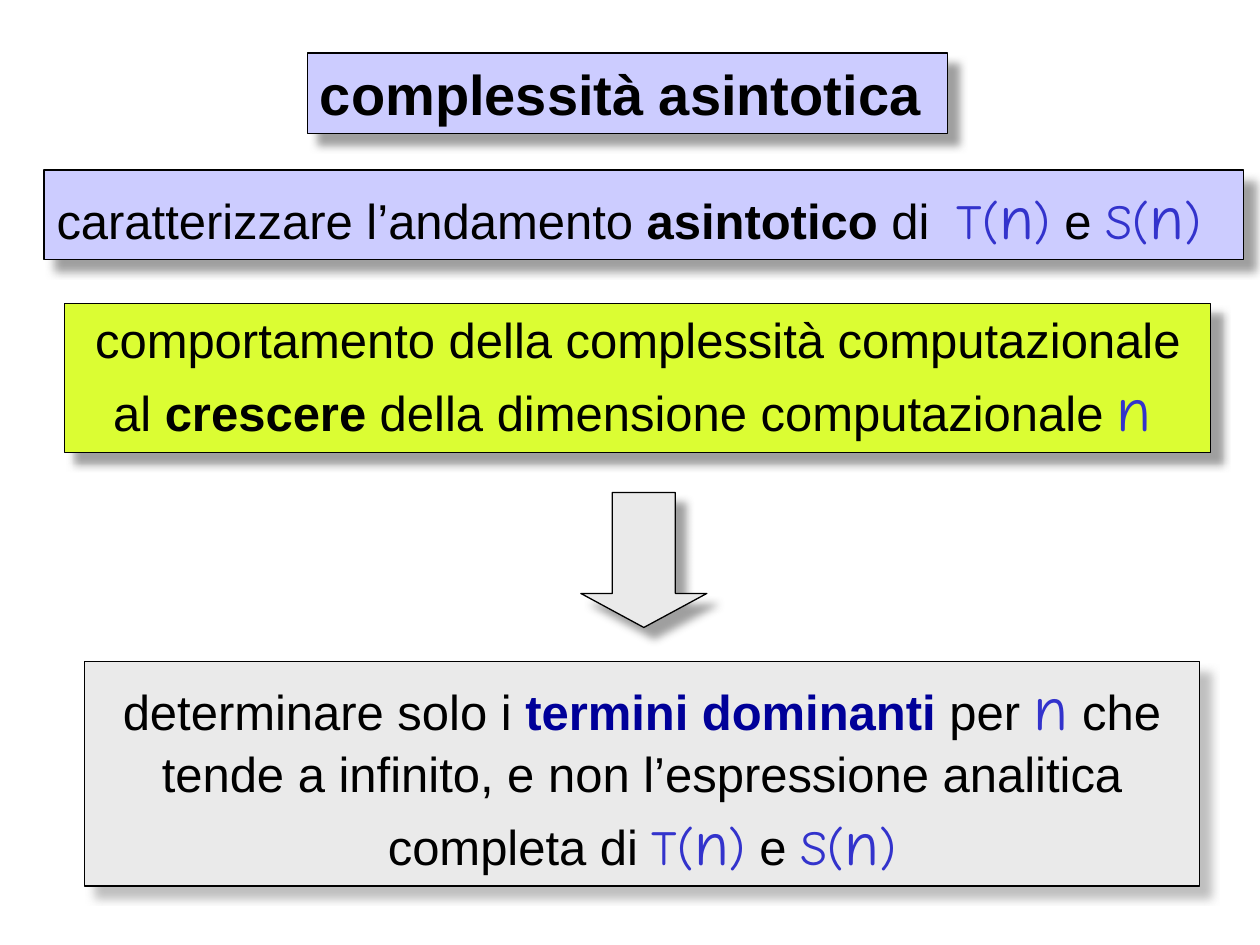
"""Build the slide on asymptotic complexity."""
from dataclasses import dataclass

from lxml.etree import SubElement
from pptx import Presentation
from pptx.dml.color import RGBColor
from pptx.enum.shapes import MSO_SHAPE as Shape
from pptx.enum.text import MSO_ANCHOR as Anchor, MSO_AUTO_SIZE as AutoSize, PP_ALIGN as Align
from pptx.oxml.ns import qn
from pptx.util import Cm, Pt

BLACK = RGBColor(0x00, 0x00, 0x00)
FORMULA_BLUE = RGBColor(0x33, 0x33, 0xCC)
NAVY = RGBColor(0x00, 0x00, 0x99)
LILAC = RGBColor(0xCC, 0xCC, 0xFF)
LIME = RGBColor(0xDB, 0xFD, 0x33)
PALE_GREY = RGBColor(0xEA, 0xEA, 0xEA)


@dataclass(frozen=True)
class Span:
    text: str
    size: int = 28
    bold: bool = False
    color: RGBColor = BLACK
    name: str = "Arial"


@dataclass(frozen=True)
class Panel:
    left: float
    top: float
    width: float
    height: float
    fill: RGBColor
    spans: tuple[Span, ...] = ()
    align: Align = Align.LEFT
    wrap: bool = True
    kind: Shape = Shape.RECTANGLE
    shadow_opacity: int = 75


def formula(text: str, size: int = 28) -> Span:
    return Span(text, size, color=FORMULA_BLUE, name="Comic Neue")


def function_of_n(letter: str) -> tuple[Span, ...]:
    return formula(f"{letter}("), SIZE_N, formula(")")


def add_shadow(box, opacity: int) -> None:
    box.shadow.inherit = False
    effects = box._element.spPr.find(qn("a:effectLst"))
    shadow = SubElement(effects, qn("a:outerShdw"), blurRad=str(Pt(5)),
                        dist=str(Pt(8.5)), dir="2700000", algn="ctr", rotWithShape="0")
    color = SubElement(shadow, qn("a:srgbClr"), val="808080")
    SubElement(color, qn("a:alpha"), val=str(opacity * 1000))


def add_span(para, span: Span) -> None:
    run = para.add_run()
    run.text = span.text
    formats = {"size": Pt(span.size), "bold": span.bold, "name": span.name}
    for key, value in formats.items():
        setattr(run.font, key, value)
    run.font.color.rgb = span.color


def add_panel(page, panel: Panel):
    place = (Cm(length) for length in (panel.left, panel.top, panel.width, panel.height))
    box = page.shapes.add_shape(panel.kind, *place)
    box.fill.solid()
    box.fill.fore_color.rgb = panel.fill
    box.line.color.rgb = BLACK
    box.line.width = Pt(0.75)
    add_shadow(box, panel.shadow_opacity)
    if panel.spans:
        formats = {"word_wrap": panel.wrap, "vertical_anchor": Anchor.TOP,
                   "auto_size": AutoSize.SHAPE_TO_FIT_TEXT}
        for key, value in formats.items():
            setattr(box.text_frame, key, value)
        para = box.text_frame.paragraphs[0]
        para.alignment = panel.align
        for span in panel.spans:
            add_span(para, span)
    return box


SIZE_N = formula("n", 36)
T_AND_S = (*function_of_n("T"), Span(" e "), *function_of_n("S"))

PANELS = (
    Panel(6.2, 1.07, 12.9, 1.63, LILAC, (Span("complessità asintotica", 32, True),)),
    Panel(1.3, 6.12, 23.11, 3, LIME, (
        Span("comportamento della complessità computazionale al "),
        Span("crescere", bold=True),
        Span(" della dimensione computazionale "),
        SIZE_N,
        Span(" ", 24, name="Times New Roman"),
    ), Align.CENTER),
    Panel(0.89, 3.43, 24.18, 1.8, LILAC, (
        Span("caratterizzare l’andamento "),
        Span("asintotico", bold=True),
        Span(" di  "),
        *T_AND_S,
    ), wrap=False),
    Panel(1.7, 13.34, 22.48, 4.52, PALE_GREY, (
        Span("determinare solo i "),
        Span("termini dominanti", bold=True, color=NAVY),
        Span(" per "),
        SIZE_N,
        Span(" che tende a infinito, e non l’espressione analitica completa di "),
        *T_AND_S,
    ), Align.CENTER, shadow_opacity=50),
)
ARROW = Panel(11.71, 9.93, 2.54, 2.72, PALE_GREY, kind=Shape.DOWN_ARROW)


def main() -> None:
    deck = Presentation()
    deck.slide_width, deck.slide_height = Cm(25.4), Cm(19.05)
    page = deck.slides.add_slide(deck.slide_layouts[6])
    for panel in PANELS:
        add_panel(page, panel)
    arrow = add_panel(page, ARROW)
    arrow.adjustments[0], arrow.adjustments[1] = 0.5, 0.27
    deck.save("out.pptx")


if __name__ == "__main__":
    main()
